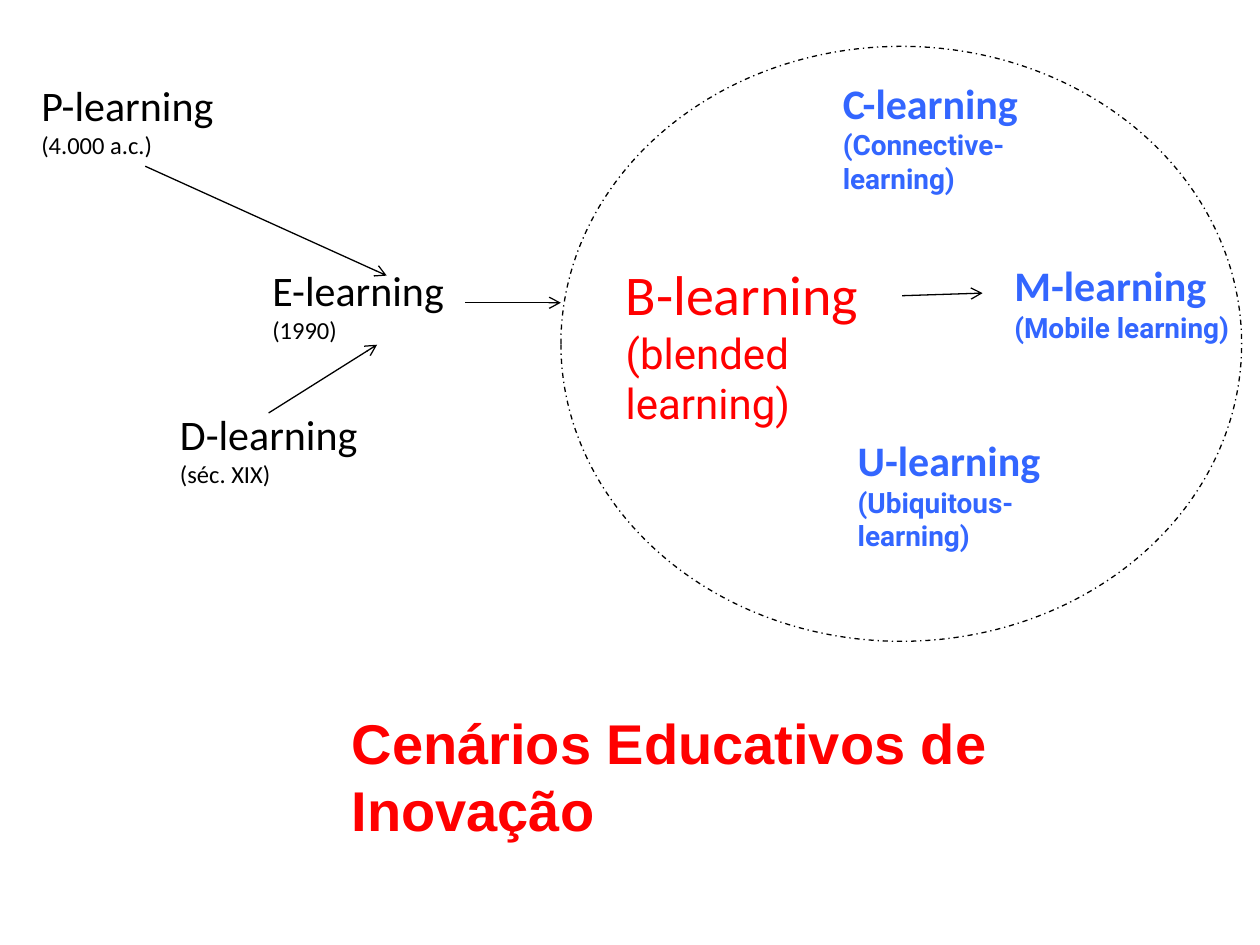
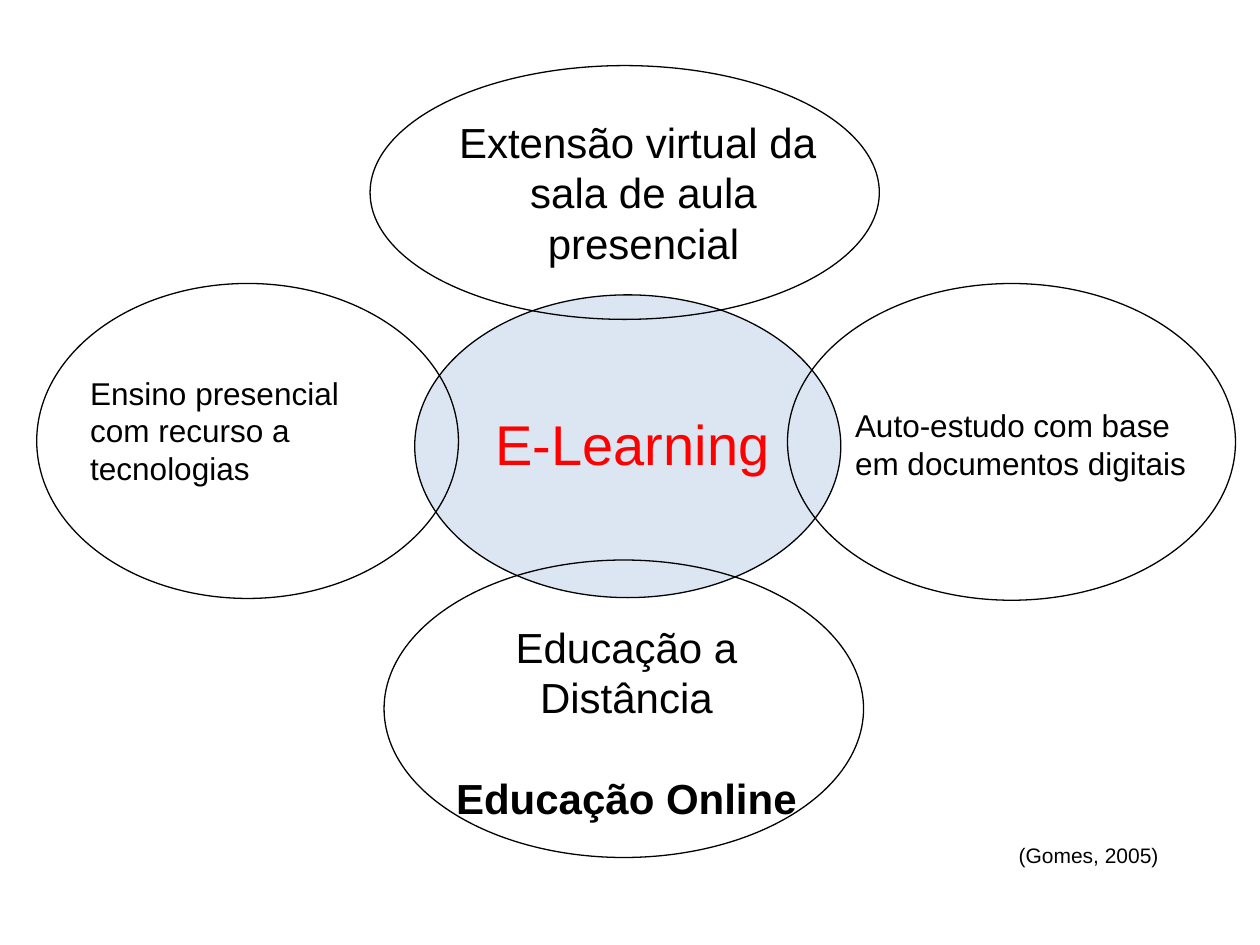
from dataclasses import dataclass

from lxml import etree
from pptx import Presentation
from pptx.dml.color import RGBColor
from pptx.enum.dml import MSO_LINE
from pptx.enum.shapes import MSO_CONNECTOR, MSO_SHAPE
from pptx.enum.text import MSO_ANCHOR, MSO_AUTO_SIZE, PP_ALIGN
from pptx.oxml.ns import qn
from pptx.util import Pt

STRAIGHT = MSO_CONNECTOR.STRAIGHT
OVAL = MSO_SHAPE.OVAL
DASH_DOT = MSO_LINE.DASH_DOT
TOP = MSO_ANCHOR.TOP
NO_FIT = MSO_AUTO_SIZE.NONE
LEFT, CENTER = PP_ALIGN.LEFT, PP_ALIGN.CENTER
TITLE_ONLY = 5

COLORS = {"black": "000000", "red": "FF0000", "blue": "3366FF", "pale": "DCE6F2"}


def style(name: str, size: float, color: str = "black", bold: bool = False) -> dict:
    return {"name": name, "size": Pt(size), "bold": bold, "color": color}


STYLES = {
    "title": style("Arial", 32, "red", True),
    "core": style("Arial", 32, "red"),
    "past": style("Calibri", 24),
    "past_note": style("Calibri", 14),
    "blended": style("Calibri", 32, "red"),
    "blended_note": style("Roboto", 24, "red"),
    "new": style("Calibri", 24, "blue", True),
    "new_note": style("Roboto", 16, "blue", True),
    "large": style("Arial", 24),
    "large_bold": style("Arial", 24, bold=True),
    "medium": style("Arial", 18),
    "source": style("Arial", 12),
}


@dataclass
class Box:
    left: float
    top: float
    width: float
    height: float

    def lengths(self) -> list:
        return [Pt(v) for v in (self.left, self.top, self.width, self.height)]


@dataclass
class Para:
    text: str
    style: str
    align: PP_ALIGN = LEFT
    before: float = 0


@dataclass
class Label:
    box: Box
    paras: list


@dataclass
class Ellipse:
    box: Box
    fill: str = ""
    dash: MSO_LINE | None = None


@dataclass
class Arrow:
    x1: float
    y1: float
    x2: float
    y2: float


def rgb(name: str) -> RGBColor:
    return RGBColor.from_string(COLORS[name])


def write(tf, paras: list) -> None:
    for key, value in {"word_wrap": True, "auto_size": NO_FIT, "vertical_anchor": TOP}.items():
        setattr(tf, key, value)
    for i, para in enumerate(paras):
        p = tf.add_paragraph() if i else tf.paragraphs[0]
        p.alignment = para.align
        if para.before:
            p.space_before = Pt(para.before)
        r = p.add_run()
        r.text = para.text
        for key, value in STYLES[para.style].items():
            if key == "color":
                r.font.color.rgb = rgb(value)
            else:
                setattr(r.font, key, value)


def add_label(s, label: Label) -> None:
    write(s.shapes.add_textbox(*label.box.lengths()).text_frame, label.paras)


def add_title(s, label: Label) -> None:
    sp = s.shapes.title
    for key, value in zip(("left", "top", "width", "height"), label.box.lengths()):
        setattr(sp, key, value)
    write(sp.text_frame, label.paras)
    sp.element.getparent().append(sp.element)


def add_ellipse(s, ellipse: Ellipse) -> None:
    sp = s.shapes.add_shape(OVAL, *ellipse.box.lengths())
    sp.shadow.inherit = False
    if ellipse.fill:
        sp.fill.solid()
        sp.fill.fore_color.rgb = rgb(ellipse.fill)
    else:
        sp.fill.background()
    sp.line.color.rgb = rgb("black")
    sp.line.width = Pt(0.75)
    if ellipse.dash:
        sp.line.dash_style = ellipse.dash


def add_arrow(s, arrow: Arrow) -> None:
    ends = [Pt(v) for v in (arrow.x1, arrow.y1, arrow.x2, arrow.y2)]
    cxn = s.shapes.add_connector(STRAIGHT, *ends)
    cxn.line.color.rgb = rgb("black")
    cxn.line.width = Pt(0.75)
    etree.SubElement(cxn.line._get_or_add_ln(), qn("a:tailEnd"), type="arrow")
    etree.SubElement(cxn.element.spPr, qn("a:effectLst"))


DRAW = {Label: add_label, Ellipse: add_ellipse, Arrow: add_arrow}


def build_slide(prs, items: list, title: Label) -> None:
    s = prs.slides.add_slide(prs.slide_layouts[TITLE_ONLY])
    for item in items:
        DRAW[type(item)](s, item)
    add_title(s, title)


def term(left: float, top: float, width: float, name: str, note: str, kind: str) -> Label:
    return Label(Box(left, top, width, 55), [Para(name, kind), Para(note, f"{kind}_note")])


SCENARIOS = [
    term(148.5, 147.5, 140, "E-learning", "(1990)", "past"),
    term(350.5, 145, 160, "B-learning", "(blended learning)", "blended"),
    term(572.5, 145, 145, "M-learning", "(Mobile learning)", "new"),
    term(16.5, 42, 140, "P-learning", "(4.000 a.c.)", "past"),
    term(95.75, 229.75, 140, "D-learning", "(séc. XIX)", "past"),
    term(474.5, 40.5, 140, "C-learning", "(Connective-learning)", "new"),
    term(483, 245, 140, "U-learning", "(Ubiquitous-learning)", "new"),
    Arrow(515.5, 169, 561.5, 167.5),
    Arrow(153.5, 236, 215.5, 197),
    Arrow(83, 95, 221, 157.5),
    Arrow(266, 173, 320.5, 173),
    Ellipse(Box(320.5, 26.5, 389, 340), dash=DASH_DOT),
]
SCENARIOS_TITLE = Label(Box(193.75, 401, 500, 46),
                        [Para("Cenários Educativos de Inovação", "title")])

MODES = [
    Ellipse(Box(237, 168.5, 243.5, 173), fill="pale"),
    Ellipse(Box(450, 162, 256, 181)),
    Ellipse(Box(21, 162, 241, 180)),
    Ellipse(Box(219.5, 320, 274, 170)),
    Ellipse(Box(211.5, 37.5, 291, 145)),
    Label(Box(481.5, 228.5, 209.5, 58.5),
          [Para("Auto-estudo com base em documentos digitais", "medium")]),
    Label(Box(44.5, 210, 191.5, 131),
          [Para("Ensino presencial com recurso a tecnologias", "medium")]),
    Label(Box(247.5, 351.5, 221, 124),
          [Para("Educação a Distância", "large", CENTER),
           Para("Educação Online", "large_bold", CENTER, 29)]),
    Label(Box(250, 63, 235.5, 94.5),
          [Para("Extensão virtual da ", "large", CENTER),
           Para("sala de aula presencial", "large", CENTER)]),
    Label(Box(575, 478, 100, 21.5), [Para("(Gomes, 2005)", "source")]),
]
MODES_TITLE = Label(Box(276, 230.5, 180, 46), [Para("E-Learning", "core")])


def main() -> None:
    prs = Presentation()
    prs.slide_width, prs.slide_height = Pt(720), Pt(540)
    build_slide(prs, SCENARIOS, SCENARIOS_TITLE)
    build_slide(prs, MODES, MODES_TITLE)
    prs.save("out.pptx")


if __name__ == "__main__":
    main()
